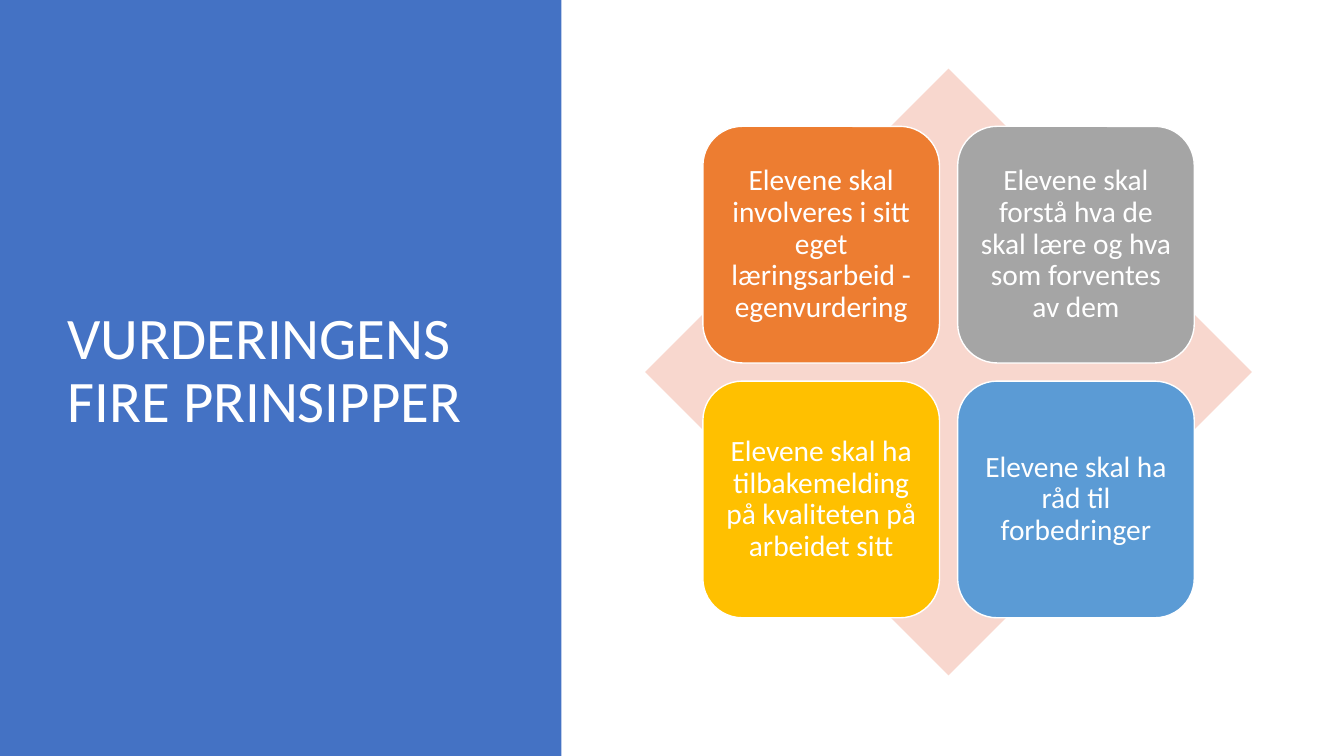
import pptx
import pptx.util
from pptx.dml.color import RGBColor
from pptx.enum.shapes import MSO_SHAPE
from pptx.enum.text import MSO_ANCHOR, PP_ALIGN
from pptx.util import Cm

COLORS = {
    "panel": "4472C4",
    "diamond": "F8D7CE",
    "white": "FFFFFF",
    "involve": "ED7D31",
    "understand": "A5A5A5",
    "feedback": "FFC000",
    "advice": "5B9BD5",
}
TITLE = "VURDERINGENS FIRE PRINSIPPER"
PRINCIPLES = [
    ("involve", "Elevene skal involveres i sitt eget læringsarbeid - egenvurdering"),
    ("understand", "Elevene skal forstå hva de skal lære og hva som forventes av dem"),
    ("feedback", "Elevene skal ha tilbakemelding på kvaliteten på arbeidet sitt"),
    ("advice", "Elevene skal ha råd til forbedringer"),
]
CARD_SHARE = 0.39
CARD_STARTS = (0.095, 0.515)


def color(name):
    return RGBColor.from_string(COLORS[name])


def set_attributes(target, values):
    for name, value in values.items():
        setattr(target, name, value)


def add_filled_shape(slide, kind, box, fill, outline=None):
    shape = slide.shapes.add_shape(kind, *map(Cm, box))
    shape.shadow.inherit = False
    shape.fill.solid()
    shape.fill.fore_color.rgb = color(fill)
    if outline:
        shape.line.color.rgb = color(outline)
        shape.line.width = pptx.util.Pt(1)
    else:
        shape.line.fill.background()
    return shape


def write_text(shape, text, size, alignment, margins):
    frame = shape.text_frame
    set_attributes(frame, {"word_wrap": True, "vertical_anchor": MSO_ANCHOR.MIDDLE, **margins})
    paragraph = frame.paragraphs[0]
    set_attributes(paragraph, {"alignment": alignment, "line_spacing": 0.9})
    run = paragraph.add_run()
    run.text = text
    set_attributes(run.font, {"name": "Calibri", "size": pptx.util.Pt(size)})
    run.font.color.rgb = color("white")


def add_title_panel(slide, box):
    left, top, width, height = box
    add_filled_shape(slide, MSO_SHAPE.RECTANGLE, box, "panel")
    title_box = (left + 1.45, top + 1.73, width - 3.58, height - 3.76)
    title = slide.shapes.add_textbox(*map(Cm, title_box))
    write_text(title, TITLE, 42, PP_ALIGN.LEFT, {})


def add_principle_matrix(slide, box):
    """Place a diamond with a two-by-two grid of cards in a square box."""
    left, top, side, _ = box
    add_filled_shape(slide, MSO_SHAPE.DIAMOND, box, "diamond")
    sides = ("left", "top", "right", "bottom")
    margins = {f"margin_{name}": Cm(0.23) for name in sides}
    for index, (fill, text) in enumerate(PRINCIPLES):
        row, column = divmod(index, 2)
        card_box = (
            left + side * CARD_STARTS[column],
            top + side * CARD_STARTS[row],
            side * CARD_SHARE,
            side * CARD_SHARE,
        )
        card = add_filled_shape(slide, MSO_SHAPE.ROUNDED_RECTANGLE, card_box, fill, "white")
        write_text(card, text, 21, PP_ALIGN.CENTER, margins)


def main():
    presentation = pptx.Presentation()
    set_attributes(presentation, {"slide_width": Cm(33.87), "slide_height": Cm(19.05)})
    slide = presentation.slides.add_slide(presentation.slide_layouts[6])
    add_title_panel(slide, (0, 0, 14.15, 19.05))
    add_principle_matrix(slide, (16.26, 1.73, 15.29, 15.29))
    presentation.save("out.pptx")


if __name__ == "__main__":
    main()
